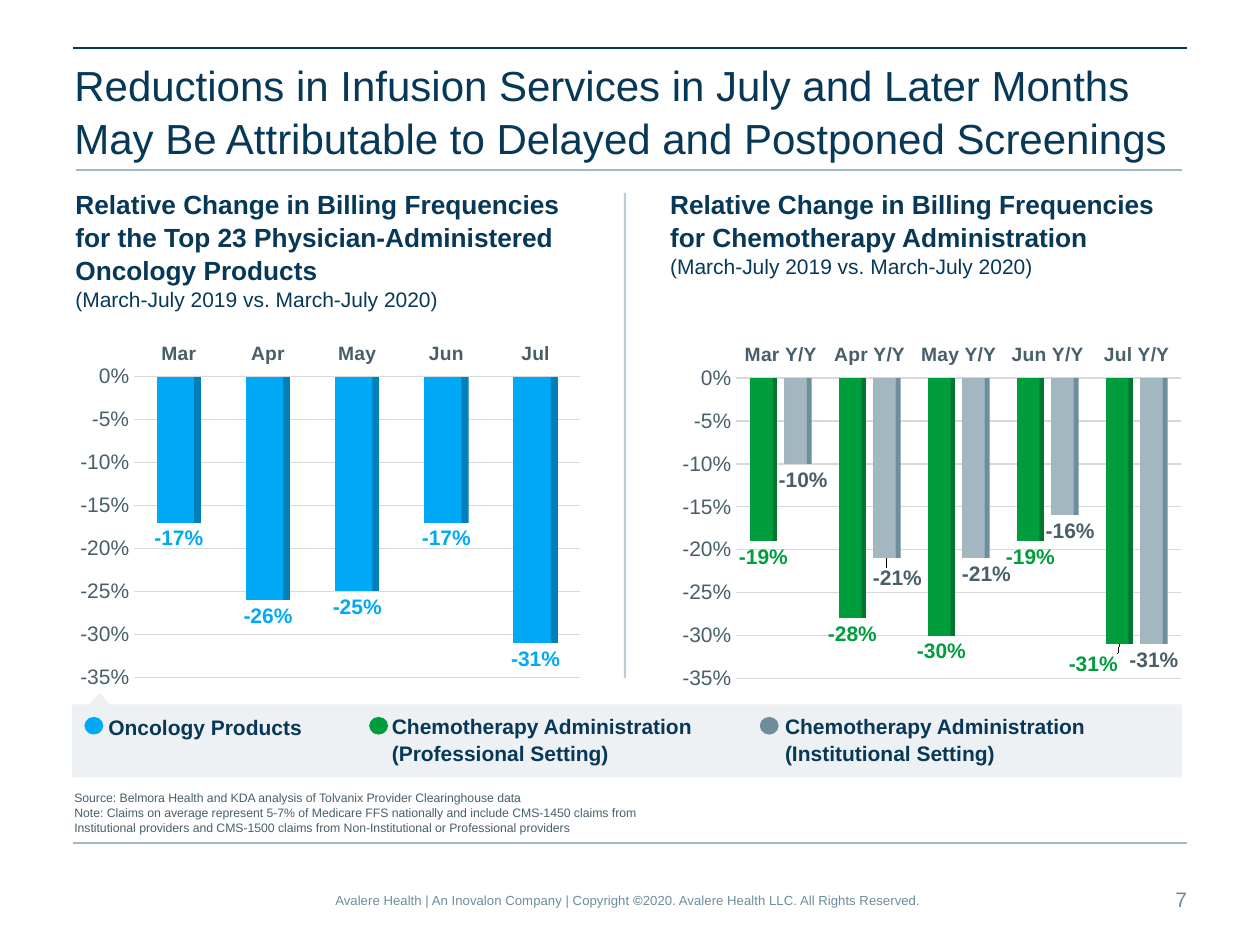
import lxml.etree
import pptx
import pptx.chart.data
import pptx.dml.color
import pptx.enum.chart
import pptx.enum.shapes
import pptx.enum.text
import pptx.oxml
import pptx.oxml.ns
import pptx.util

Inches = pptx.util.Inches
Pt = pptx.util.Pt
Align = pptx.enum.text.PP_ALIGN
Anchor = pptx.enum.text.MSO_ANCHOR
Shape = pptx.enum.shapes.MSO_SHAPE
qn = pptx.oxml.ns.qn

FONT = "Arial"
NAVY, SLATE, STEEL, MIST = "073857", "485F6A", "6E8D9D", "A3B7C1"
BLUE, GREEN, GRID, PANEL = "00A9F6", "009D3D", "D9D9D9", "EDF1F3"


def rgb(value):
    return pptx.dml.color.RGBColor.from_string(value)


def style_font(font, size, color, bold=False):
    font.name = FONT
    font.size = Pt(size)
    font.bold = bold
    font.color.rgb = rgb(color)


def add_text(shapes, place, paragraphs, color, inset=(0.1, 0.05, 0.1, 0.05),
             anchor=Anchor.TOP, align=Align.LEFT, spacing=1.0):
    """Each paragraph is a list of (text, size, bold) runs; a newline ends a line."""
    box = shapes.add_textbox(*map(Inches, place))
    frame = box.text_frame
    frame.word_wrap = True
    frame.vertical_anchor = anchor
    (frame.margin_left, frame.margin_top,
     frame.margin_right, frame.margin_bottom) = map(Inches, inset)
    for index, runs in enumerate(paragraphs):
        para = frame.add_paragraph() if index else frame.paragraphs[0]
        para.alignment = align
        para.line_spacing = spacing
        for text, size, bold in runs:
            for row, line in enumerate(text.split("\n")):
                if row:
                    para.add_line_break()
                if line:
                    span = para.add_run()
                    span.text = line
                    style_font(span.font, size, color, bold)


def add_line(page, start, end, color, width, opacity=100):
    line = page.shapes.add_connector(
        pptx.enum.shapes.MSO_CONNECTOR.STRAIGHT, *map(Inches, start + end))
    line.line.color.rgb = rgb(color)
    line.line.width = Pt(width)
    properties = line._element.spPr
    if opacity < 100:
        tint = properties.find(".//" + qn("a:srgbClr"))
        lxml.etree.SubElement(tint, qn("a:alpha")).set("val", str(opacity * 1000))
    lxml.etree.SubElement(properties, qn("a:effectLst"))


def add_filled(shapes, kind, place, color):
    shape = shapes.add_shape(kind, *map(Inches, place))
    shape.shadow.inherit = False
    shape.fill.solid()
    shape.fill.fore_color.rgb = rgb(color)
    shape.line.fill.background()


def manual_layout(settings):
    layout = pptx.oxml.parse_xml(
        '<c:layout xmlns:c="http://schemas.openxmlformats.org/drawingml/2006/chart"/>')
    manual = lxml.etree.SubElement(layout, qn("c:manualLayout"))
    for name, value in settings.items():
        lxml.etree.SubElement(manual, qn("c:" + name)).set("val", str(value))
    return layout


def set_plot_area(chart, x, y, width, height):
    area = chart._chartSpace.chart.plotArea
    for old in area.findall(qn("c:layout")):
        area.remove(old)
    area.insert(0, manual_layout({
        "layoutTarget": "inner", "xMode": "edge", "yMode": "edge",
        "x": x, "y": y, "w": width, "h": height}))


def style_series(series, edge, face, edge_stop, face_stop, label_color, shifts):
    """Shade the right edge of the bars; shifts maps a point to its label offset."""
    series.invert_if_negative = False
    fill = series.format.fill
    fill.gradient()
    fill.gradient_angle = 180
    for stop, color, position in zip(
            fill.gradient_stops, (edge, face), (edge_stop, face_stop)):
        stop.color.rgb = rgb(color)
        stop.position = position
    labels = series.data_labels
    labels.show_value = True
    labels.number_format = "0%"
    labels.number_format_is_linked = False
    outside = pptx.enum.chart.XL_LABEL_POSITION.OUTSIDE_END
    labels.position = outside
    style_font(labels.font, 12, label_color, True)
    for index, (x, y) in shifts.items():
        label = series.points[index].data_label
        label.position = outside
        style_font(label.font, 12, label_color, True)
        element = labels._element.xpath(f"c:dLbl[c:idx/@val='{index}']")[0]
        element.insert(1, manual_layout({"x": x, "y": y}))


def add_change_chart(page, place, plot_area, categories, series_list):
    data = pptx.chart.data.CategoryChartData(number_format="0%")
    data.categories = categories
    for number, (values, _) in enumerate(series_list, 1):
        data.add_series(f"Series {number}", values)
    chart = page.shapes.add_chart(
        pptx.enum.chart.XL_CHART_TYPE.COLUMN_CLUSTERED,
        *map(Inches, place), data).chart
    chart.has_legend = False
    chart.has_title = False
    style_font(chart.font, 10, "000000")
    set_plot_area(chart, *plot_area)
    plot = chart.plots[0]
    plot.vary_by_categories = False
    plot.gap_width = 100
    plot.overlap = -27

    months, change = chart.category_axis, chart.value_axis
    for axis in (months, change):
        axis.major_tick_mark = axis.minor_tick_mark = pptx.enum.chart.XL_TICK_MARK.NONE
    months.tick_label_position = pptx.enum.chart.XL_TICK_LABEL_POSITION.HIGH
    style_font(months.tick_labels.font, 11, SLATE, True)
    style_font(change.tick_labels.font, 12, SLATE)
    change.minimum_scale, change.maximum_scale, change.major_unit = -0.35, 0, 0.05
    change.tick_labels.number_format = "0%"
    change.tick_labels.number_format_is_linked = False
    change.format.line.fill.background()
    for line in (months.format.line, change.major_gridlines.format.line):
        line.color.rgb = rgb(GRID)
        line.width = Pt(0.75)
    for series, (_, style) in zip(plot.series, series_list):
        style_series(series, *style)


def add_legend(page):
    shapes = page.shapes.add_group_shape().shapes
    add_filled(shapes, Shape.RECTANGLE, (0.57, 5.59, 8.81, 0.58), PANEL)
    add_filled(shapes, Shape.ISOSCELES_TRIANGLE, (0.7, 5.5, 0.18, 0.1), PANEL)
    entries = [
        (0.67, 0.77, 2.29, 0.29, BLUE, "Oncology Products"),
        (2.93, 3.02, 2.84, 0.49, GREEN,
         "Chemotherapy Administration (Professional Setting)"),
        (6.03, 6.14, 2.68, 0.49, STEEL,
         "Chemotherapy Administration (Institutional Setting)"),
    ]
    for dot_left, left, width, height, color, name in entries:
        add_text(shapes, (left, 5.62, width, height), [[(name, 12, True)]], NAVY,
                 (0.09, 0.04, 0.09, 0.04), Anchor.MIDDLE, spacing=1.05)
        add_filled(shapes, Shape.OVAL, (dot_left, 5.69, 0.15, 0.14), color)


def main():
    deck = pptx.Presentation()
    deck.slide_width, deck.slide_height = Inches(10), Inches(7.5)
    page = deck.slides.add_slide(deck.slide_layouts[6])

    add_line(page, (0.58, 0.38), (9.42, 0.38), NAVY, 0.75)
    add_line(page, (0.6, 1.35), (9.38, 1.35), MIST, 1)
    add_line(page, (4.96, 1.53), (4.96, 5.38), MIST, 1.25, opacity=70)
    add_line(page, (0.58, 6.69), (9.42, 6.69), MIST, 0.75)

    add_text(page.shapes, (0.5, 0.41, 8.9, 0.49), [[(
        "Reductions in Infusion Services in July and Later Months "
        "May Be Attributable to Delayed and Postponed Screenings", 24, False)]],
        NAVY, (0.09, 0.04, 0.09, 0.04), spacing=1.05)
    period = ("(March-July 2019 vs. March-July 2020)", 12, False)
    add_text(page.shapes, (0.5, 1.43, 4.28, 1.06), [
        [("Relative Change in Billing Frequencies for the Top 23 "
          "Physician-Administered Oncology Products", 15, True)],
        [period]], NAVY, spacing=1.05)
    add_text(page.shapes, (5.22, 1.43, 4.3, 0.81), [
        [("Relative Change in Billing Frequencies for Chemotherapy "
          "Administration\n", 15, True), period]], NAVY, spacing=1.05)

    months = ["Mar", "Apr", "May", "Jun", "Jul"]
    add_change_chart(page, (0.44, 2.63, 4.17, 3.27), (0.15, 0.11, 0.85, 0.73), months, [
        ([-0.17, -0.26, -0.25, -0.17, -0.31],
         ("007FB8", BLUE, 0.15, 0.17, BLUE, {}))])
    add_change_chart(page, (5.22, 2.64, 4.16, 3.27), (0.15, 0.11, 0.85, 0.73),
                     [f"{month} Y/Y" for month in months], [
        ([-0.19, -0.28, -0.3, -0.19, -0.31],
         ("00762E", GREEN, 0.15, 0.18, GREEN, {4: (-0.05, 0.01)})),
        ([-0.1, -0.21, -0.21, -0.16, -0.31],
         (STEEL, MIST, 0.15, 0.2, SLATE,
          {0: (0.01, 0), 1: (0.02, 0.01), 2: (0.02, 0), 3: (0.01, 0)}))])
    add_legend(page)

    add_text(page.shapes, (0.59, 6.1, 6.97, 0.53), [
        [("Source: Belmora Health and KDA analysis of Tolvanix Provider "
          "Clearinghouse data", 7, False)],
        [("Note: Claims on average represent 5-7% of Medicare FFS nationally and "
          "include CMS-1450 claims from\nInstitutional providers and CMS-1500 claims "
          "from Non-Institutional or Professional providers", 7, False)]],
        SLATE, (0, 0, 0.1, 0), Anchor.BOTTOM, spacing=1.05)
    add_text(page.shapes, (2.41, 7.03, 5.19, 0.23), [[
        ("Avalere Health | An Inovalon Company | Copyright ", 7.5, False),
        ("©", 7.5, True),
        ("2020. Avalere Health LLC. All Rights Reserved.", 7.5, False)]],
        STEEL, (0.05, 0.05, 0.1, 0.05), align=Align.CENTER)
    add_text(page.shapes, (8.84, 6.94, 0.58, 0.4), [[("7", 12, False)]], STEEL,
             (0.1, 0.05, 0, 0.05), Anchor.MIDDLE, Align.RIGHT)
    deck.save("out.pptx")


if __name__ == "__main__":
    main()
